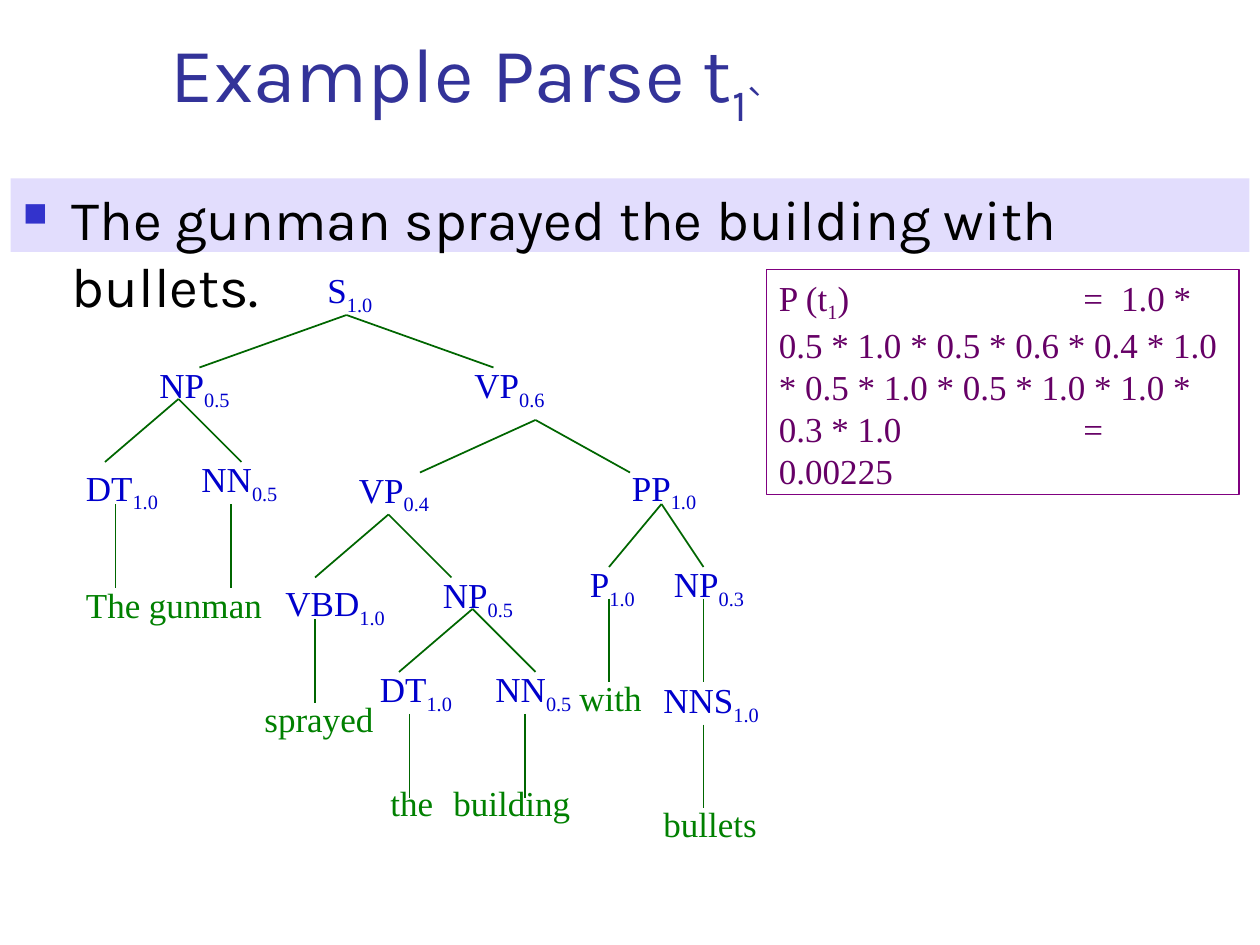
from dataclasses import dataclass

from lxml.etree import SubElement
from pptx import Presentation
from pptx.dml.color import RGBColor
from pptx.enum.shapes import MSO_CONNECTOR, MSO_SHAPE
from pptx.enum.text import MSO_ANCHOR, PP_ALIGN
from pptx.oxml.ns import qn
from pptx.util import Emu, Pt

EMU_PER_PX = 7620
LABEL_HEIGHT = 52
STEM_HEIGHT = 80
SERIF = "Times New Roman"
SANS = "Karla"
COLORS = {
    "title": "333399", "band": "E2DDFD", "bullet": "3333CC", "body": "000000",
    "symbol": "0000CC", "word": "008000", "edge": "006600",
    "formula": "660066", "frame": "800080",
}


@dataclass(frozen=True)
class Label:
    text: str
    left: int
    top: int
    width: int
    probability: str = ""


@dataclass(frozen=True)
class Fork:
    x: int
    top: int
    left_x: int
    right_x: int
    bottom: int


@dataclass(frozen=True)
class Style:
    font: str
    size: int
    color: str


TITLE = Style(SANS, 44, "title")
BODY = Style(SANS, 32, "body")
SYMBOL = Style(SERIF, 20, "symbol")
WORD = Style(SERIF, 20, "word")
FORMULA = Style(SERIF, 20, "formula")

SYMBOLS = [
    Label("S", 300, 250, 90, "1.0"),
    Label("NP", 140, 340, 110, "0.5"),
    Label("VP", 440, 340, 120, "0.6"),
    Label("DT", 70, 438, 120, "1.0"),
    Label("NN", 180, 430, 110, "0.5"),
    Label("VP", 330, 440, 120, "0.4"),
    Label("PP", 590, 438, 120, "1.0"),
    Label("VBD", 260, 548, 150, "1.0"),
    Label("NP", 410, 540, 120, "0.5"),
    Label("P", 550, 530, 90, "1.0"),
    Label("NP", 630, 530, 110, "0.3"),
    Label("DT", 350, 630, 110, "1.0"),
    Label("NN", 460, 630, 120, "0.5"),
    Label("NNS", 620, 640, 120, "1.0"),
]
WORDS = [
    Label("The", 70, 550, 90),
    Label("gunman", 130, 550, 160),
    Label("sprayed", 240, 658, 160),
    Label("the", 360, 738, 70),
    Label("building", 420, 738, 140),
    Label("with", 540, 638, 120),
    Label("bullets", 620, 758, 120),
]
FORKS = [
    Fork(330, 300, 190, 470, 350),
    Fork(510, 400, 400, 600, 450),
    Fork(170, 380, 100, 230, 440),
    Fork(370, 490, 300, 430, 550),
    Fork(630, 480, 580, 670, 540),
    Fork(450, 580, 380, 510, 640),
]
STEMS = [(110, 480), (220, 480), (300, 590), (390, 680),
         (500, 680), (580, 570), (670, 570), (670, 690)]


def px(value: int) -> Emu:
    return Emu(value * EMU_PER_PX)


def color(name: str) -> RGBColor:
    return RGBColor.from_string(COLORS[name])


def style_para(para, style: Style) -> None:
    para.alignment = PP_ALIGN.LEFT
    para.font.name = style.font
    para.font.size = Pt(style.size)
    para.font.color.rgb = color(style.color)


def add_span(para, text: str, subscript: bool = False) -> None:
    span = para.add_run()
    span.text = text
    if subscript:
        span.font._element.set("baseline", "-25000")


def add_box(page, left: int, top: int, width: int, height: int):
    box = page.shapes.add_textbox(px(left), px(top), px(width), px(height))
    box.text_frame.word_wrap = True
    return box


def add_rectangle(page, left: int, top: int, width: int, height: int):
    box = page.shapes.add_shape(
        MSO_SHAPE.RECTANGLE, px(left), px(top), px(width), px(height))
    box.shadow.inherit = False
    box.text_frame.word_wrap = True
    box.text_frame.vertical_anchor = MSO_ANCHOR.TOP
    return box


def add_label(page, label: Label, style: Style) -> None:
    box = add_box(page, label.left, label.top, label.width, LABEL_HEIGHT)
    para = box.text_frame.paragraphs[0]
    para.space_before = Pt(1)
    style_para(para, style)
    add_span(para, label.text)
    if label.probability:
        add_span(para, label.probability, subscript=True)


def add_edge(page, start: tuple[int, int], end: tuple[int, int], weight: float) -> None:
    edge = page.shapes.add_connector(
        MSO_CONNECTOR.STRAIGHT, *map(px, start), *map(px, end))
    edge.line.color.rgb = color("edge")
    edge.line.width = Pt(weight)
    SubElement(edge._element.spPr, qn("a:effectLst"))


def add_title(page) -> None:
    frame = add_box(page, 151, 28, 1022, 102).text_frame
    frame.vertical_anchor = MSO_ANCHOR.BOTTOM
    para = frame.paragraphs[0]
    style_para(para, TITLE)
    add_span(para, "Example Parse t")
    add_span(para, "1`", subscript=True)


def add_sentence(page) -> None:
    band = add_rectangle(page, 10, 170, 1180, 70)
    band.fill.solid()
    band.fill.fore_color.rgb = color("band")
    band.line.fill.background()
    para = band.text_frame.paragraphs[0]
    para.space_before = Pt(1)
    props = para._p.get_or_add_pPr()
    props.set("marL", str(px(46)))
    props.set("indent", str(px(-46)))
    bullet_color = SubElement(props, qn("a:buClr"))
    SubElement(bullet_color, qn("a:srgbClr"), val=COLORS["bullet"])
    SubElement(props, qn("a:buSzPct"), val="60000")
    SubElement(props, qn("a:buChar"), char="■")
    style_para(para, BODY)
    add_span(para, "The gunman sprayed the building with bullets.")


def add_formula(page) -> None:
    frame = add_rectangle(page, 730, 257, 450, 214)
    frame.fill.background()
    frame.line.color.rgb = color("frame")
    frame.line.width = Pt(0.75)
    para = frame.text_frame.paragraphs[0]
    para.space_before = Pt(1)
    stops = SubElement(para._p.get_or_add_pPr(), qn("a:tabLst"))
    for stop in (290, 326):
        SubElement(stops, qn("a:tab"), pos=str(px(stop)), algn="l")
    style_para(para, FORMULA)
    add_span(para, "P (t")
    add_span(para, "1", subscript=True)
    add_span(para, ")\t=\t1.0 * 0.5 * 1.0 * 0.5 * 0.6 * 0.4 * 1.0 * 0.5 * 1.0 "
                   "* 0.5 * 1.0 * 1.0 * 0.3 * 1.0\t=")
    para.add_line_break()
    add_span(para, "0.00225")


def main() -> None:
    deck = Presentation()
    deck.slide_width, deck.slide_height = px(1200), px(900)
    page = deck.slides.add_slide(deck.slide_layouts[6])
    add_title(page)
    add_sentence(page)
    for label in SYMBOLS:
        add_label(page, label, SYMBOL)
    for label in WORDS:
        add_label(page, label, WORD)
    add_formula(page)
    for fork in FORKS:
        for x in (fork.left_x, fork.right_x):
            add_edge(page, (fork.x, fork.top), (x, fork.bottom), 1)
    for x, top in STEMS:
        add_edge(page, (x, top), (x, top + STEM_HEIGHT), 0.75)
    deck.save("out.pptx")


if __name__ == "__main__":
    main()
